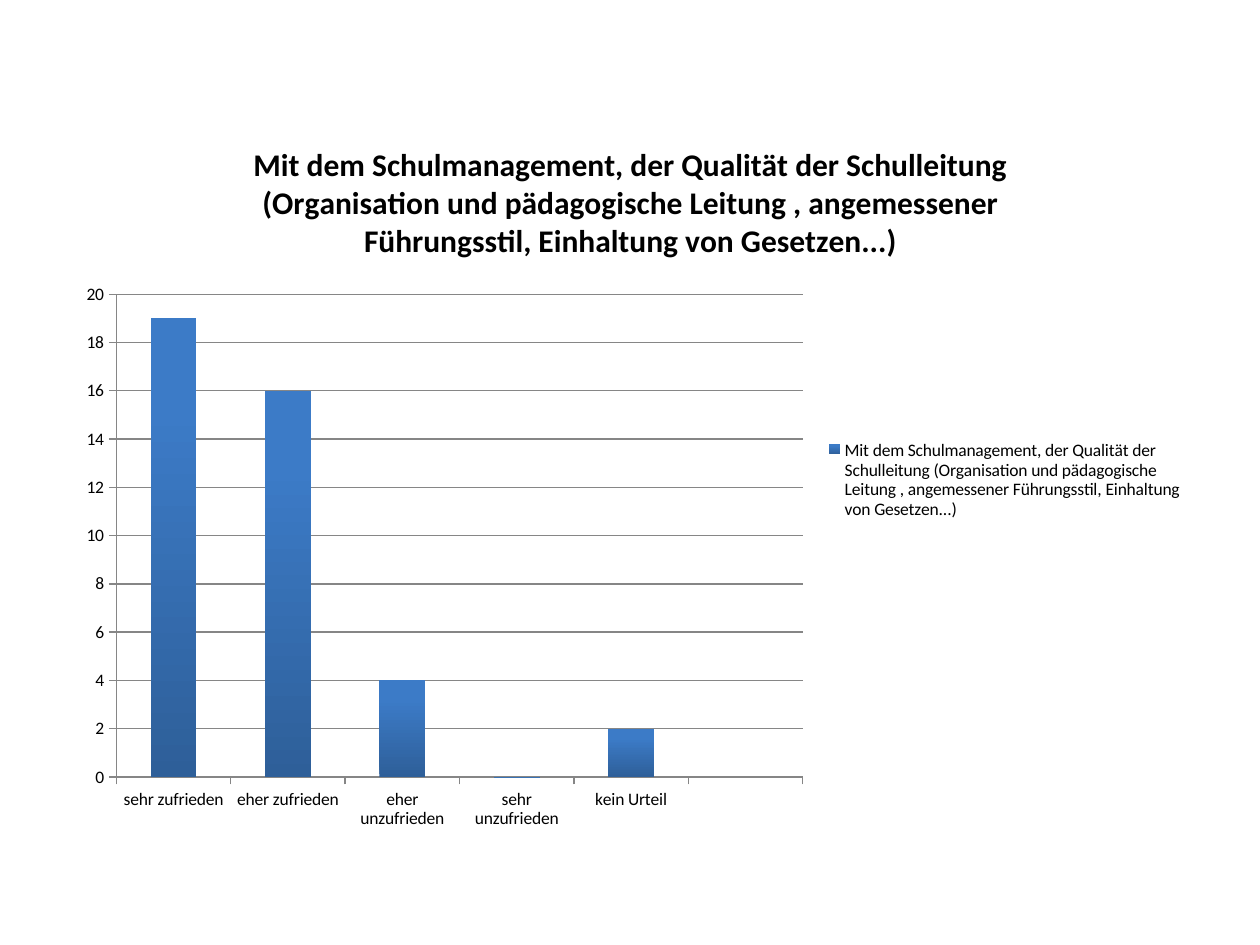
from lxml import etree
from pptx import Presentation
from pptx.chart.data import CategoryChartData
from pptx.dml.color import RGBColor
from pptx.enum.chart import XL_CHART_TYPE, XL_LEGEND_POSITION, XL_TICK_MARK
from pptx.oxml.ns import qn
from pptx.util import Pt

COLUMNS = XL_CHART_TYPE.COLUMN_CLUSTERED
RIGHT = XL_LEGEND_POSITION.RIGHT
OUTSIDE = XL_TICK_MARK.OUTSIDE
NO_TICK = XL_TICK_MARK.NONE

QUESTION = ("Mit dem Schulmanagement, der Qualität der Schulleitung "
            "(Organisation und pädagogische Leitung , angemessener "
            "Führungsstil, Einhaltung von Gesetzen...)")
# The last category is an empty slot on the axis
ANSWERS = {"sehr zufrieden": 19, "eher zufrieden": 16, "eher unzufrieden": 4,
           "sehr unzufrieden": 0, "kein Urteil": 2, "": None}


def color(value):
    return RGBColor.from_string(value)


def apply(target, values):
    for name, value in values.items():
        setattr(target, name, value)


class SurveySlide:
    font = "Calibri"
    ink = "000000"
    rule = "868686"
    bar_stops = (("2E5F99", 0), ("3C7BC7", 0.8))

    def __init__(self, deck):
        self.slide = deck.slides.add_slide(deck.slide_layouts[6])

    def style_text(self, font, size, bold=False):
        apply(font, {"name": self.font, "size": Pt(size), "bold": bold})
        font.color.rgb = color(self.ink)

    def style_line(self, line):
        line.width = Pt(0.75)
        line.color.rgb = color(self.rule)

    def place(self, parent, before, **box):
        """Fix a chart part at fractions of the chart's size."""
        for old in parent.findall(qn("c:layout")):
            parent.remove(old)
        layout = etree.Element(qn("c:layout"))
        manual = etree.SubElement(layout, qn("c:manualLayout"))
        for tag, value in box.items():
            etree.SubElement(manual, qn("c:" + tag)).set("val", str(value))
        parent.find(qn(before)).addprevious(layout)

    def column_chart(self, title, answers, left, top, width, height):
        data = CategoryChartData()
        data.categories = list(answers)
        data.add_series(title, list(answers.values()))
        chart = self.slide.shapes.add_chart(
            COLUMNS, Pt(left), Pt(top), Pt(width), Pt(height), data).chart
        self.style_text(chart.font, 10)
        self.title(chart, title)
        self.axes(chart)
        self.bars(chart.plots[0])
        self.legend(chart)
        self.place(chart.plots[0]._element.getparent(), "c:barChart",
                   layoutTarget="inner", xMode="edge", yMode="edge",
                   x=0.046, y=0.245, w=0.606, h=0.663)

    def title(self, chart, text):
        chart.has_title = True
        frame = chart.chart_title.text_frame
        frame.text = text
        self.style_text(frame.paragraphs[0].runs[0].font, 18, bold=True)
        chart.chart_title.include_in_layout = False

    def axes(self, chart):
        ticks = {"major_tick_mark": OUTSIDE, "minor_tick_mark": NO_TICK}
        scale = {"minimum_scale": 0, "maximum_scale": 20, "major_unit": 2,
                 "has_major_gridlines": True}
        apply(chart.category_axis, ticks)
        apply(chart.value_axis, ticks | scale)
        for part in (chart.category_axis, chart.value_axis,
                     chart.value_axis.major_gridlines):
            self.style_line(part.format.line)

    def bars(self, plot):
        apply(plot, {"gap_width": 150, "vary_by_categories": False})
        fill = plot.series[0].format.fill
        fill.gradient()
        fill.gradient_angle = 90
        for stop, (shade, position) in zip(fill.gradient_stops, self.bar_stops):
            stop.color.rgb = color(shade)
            stop.position = position

    def legend(self, chart):
        chart.has_legend = True
        apply(chart.legend, {"position": RIGHT, "include_in_layout": False})
        self.style_text(chart.legend.font, 10)
        self.place(chart.legend._element, "c:overlay",
                   xMode="edge", yMode="edge",
                   x=0.67, y=0.44, w=0.32, h=0.12)


def main():
    deck = Presentation()
    deck.slide_width, deck.slide_height = Pt(720), Pt(540)

    # Survey result
    survey = SurveySlide(deck)
    survey.column_chart(QUESTION, ANSWERS, 36.7, 66.2, 647.3, 416.2)

    deck.save("out.pptx")


if __name__ == "__main__":
    main()
